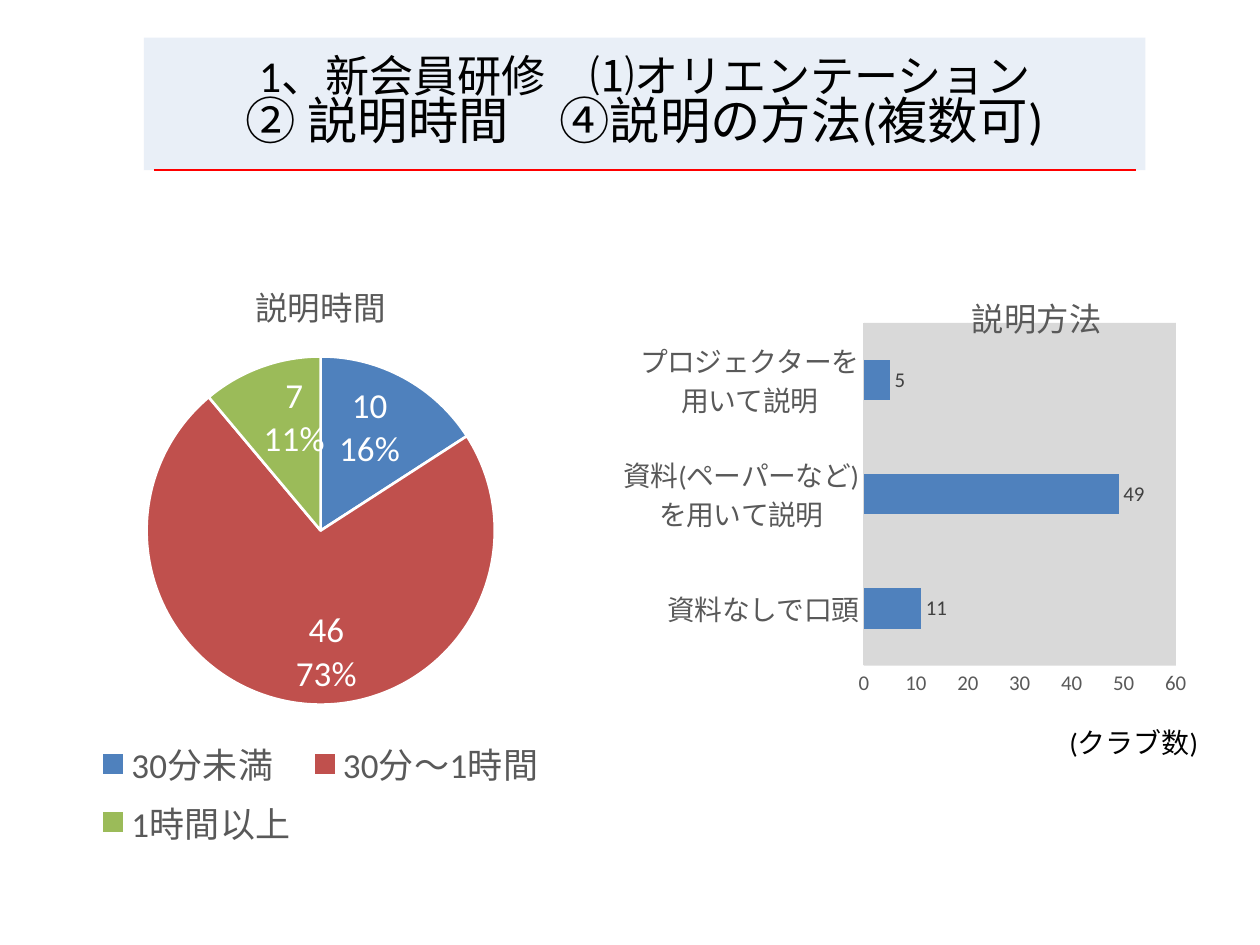
from lxml import etree
from pptx import Presentation
from pptx.chart import data
from pptx.dml import color
from pptx.enum import chart as ch, shapes, text
from pptx.oxml import ns
from pptx.util import Cm, Pt

THEME = {
    "font": "Calibri", "ink": "000000", "muted": "595959", "label": "404040",
    "white": "FFFFFF", "band": "E9EFF7", "rule": "FF0000", "grey": "D9D9D9",
    "slices": ["4F81BD", "C0504D", "9BBB59"],
    "sizes": {"topic": 25.2, "heading": 28.8, "chart": 10, "title": 18.6,
              "legend": 20, "slice": 20, "category": 16, "tick": 12, "unit": 16},
}
SIZES = THEME["sizes"]

HEADING = [("1、新会員研修　⑴オリエンテーション", "topic"),
           ("② 説明時間　④説明の方法(複数可)", "heading")]
UNIT = "(クラブ数)"
DURATION = ("説明時間", [("30分未満", 10), ("30分～1時間", 46), ("1時間以上", 7)])
METHOD = ("説明方法", [("資料なしで口頭", 11), ("資料(ペーパーなど)を用いて説明", 49),
                   ("プロジェクターを用いて説明", 5)])

PLACES = {
    "heading": (2.9, 0.76, 20.19, 2.67),
    "rule": (3.1, 3.43, 22.91, 3.43),
    "method": (12.57, 5.11, 12.93, 10.01),
    "duration": (0, 5.11, 12.93, 12.12),
    "unit": (21.31, 14.5, 3.2, 0.94),
}


def place(key):
    return [Cm(value) for value in PLACES[key]]


def assign(target, values):
    for key, value in values.items():
        setattr(target, key, value)


def style(font, size, ink):
    assign(font, {"size": Pt(SIZES[size]), "name": THEME["font"], "bold": False})
    font.color.rgb = color.RGBColor.from_string(THEME[ink])


def paint(fill, rgb):
    fill.solid()
    fill.fore_color.rgb = color.RGBColor.from_string(rgb)


def stroke(line, rgb, width):
    line.color.rgb = color.RGBColor.from_string(rgb)
    line.width = Pt(width)


def set_layout(parent, before, values, inner=False):
    for old in parent.findall(ns.qn("c:layout")):
        parent.remove(old)
    layout = etree.Element(ns.qn("c:layout"))
    manual = etree.SubElement(layout, ns.qn("c:manualLayout"))
    modes = {"layoutTarget": "inner"} if inner else {}
    modes.update({"xMode": "edge", "yMode": "edge"})
    for tag, value in {**modes, **values}.items():
        etree.SubElement(manual, ns.qn("c:" + tag)).set("val", str(value))
    parent.insert(before, layout)


def add_survey(slide, kind, key, survey):
    name, answers = survey
    source = data.CategoryChartData()
    source.categories = [answer for answer, _ in answers]
    source.add_series(name, [count for _, count in answers])
    survey_chart = slide.shapes.add_chart(kind, *place(key), source).chart
    style(survey_chart.font, "chart", "ink")
    survey_chart.has_title = True
    title = survey_chart.chart_title
    title.include_in_layout = False
    title.text_frame.text = name
    style(title.text_frame.paragraphs[0].runs[0].font, "title", "muted")
    return survey_chart


def add_labels(plot, size, ink, values):
    plot.has_data_labels = True
    assign(plot.data_labels, values)
    style(plot.data_labels.font, size, ink)


def add_heading(slide):
    band = slide.shapes.add_shape(shapes.MSO_SHAPE.RECTANGLE, *place("heading"))
    band.shadow.inherit = False
    paint(band.fill, THEME["band"])
    band.line.fill.background()
    assign(band.text_frame, {"word_wrap": True, "vertical_anchor": text.MSO_ANCHOR.MIDDLE})
    lines = band.text_frame.paragraphs[0]
    assign(lines, {"alignment": text.PP_ALIGN.CENTER, "line_spacing": 0.8})
    for index, (words, size) in enumerate(HEADING):
        if index:
            lines.add_line_break()
        run = lines.add_run()
        run.text = words
        style(run.font, size, "ink")
    rule = slide.shapes.add_connector(shapes.MSO_CONNECTOR.STRAIGHT, *place("rule"))
    stroke(rule.line, THEME["rule"], 1.5)
    etree.SubElement(rule._element.spPr, ns.qn("a:effectLst"))


def add_method(slide):
    bars = add_survey(slide, ch.XL_CHART_TYPE.BAR_CLUSTERED, "method", METHOD)
    bars.has_legend = False
    set_layout(bars.chart_title._element, 1, {"x": 0.53, "y": 0.06})
    plot = bars.plots[0]
    assign(plot, {"gap_width": 182, "vary_by_categories": False})
    paint(plot.series[0].format.fill, THEME["slices"][0])
    add_labels(plot, "tick", "label", {
        "show_value": True, "position": ch.XL_LABEL_POSITION.OUTSIDE_END})
    for axis, size in ((bars.category_axis, "category"), (bars.value_axis, "tick")):
        assign(axis, {"major_tick_mark": ch.XL_TICK_MARK.NONE,
                      "minor_tick_mark": ch.XL_TICK_MARK.NONE})
        style(axis.tick_labels.font, size, "muted")
    stroke(bars.category_axis.format.line, THEME["grey"], 0.75)
    assign(bars.value_axis, {"minimum_scale": 0, "maximum_scale": 60, "major_unit": 10})
    bars.value_axis.format.line.fill.background()
    stroke(bars.value_axis.major_gridlines.format.line, THEME["grey"], 0.75)
    area = bars._chartSpace.chart.plotArea
    set_layout(area, 0, {"x": 0.37, "y": 0.14, "w": 0.49, "h": 0.69}, inner=True)
    area_fill = etree.SubElement(etree.SubElement(area, ns.qn("c:spPr")), ns.qn("a:solidFill"))
    etree.SubElement(area_fill, ns.qn("a:srgbClr")).set("val", THEME["grey"])


def add_duration(slide):
    pie = add_survey(slide, ch.XL_CHART_TYPE.PIE, "duration", DURATION)
    pie.has_legend = True
    assign(pie.legend, {"position": ch.XL_LEGEND_POSITION.BOTTOM, "include_in_layout": False})
    style(pie.legend.font, "legend", "muted")
    plot = pie.plots[0]
    plot.vary_by_categories = True
    for index, rgb in enumerate(THEME["slices"]):
        piece = plot.series[0].points[index].format
        paint(piece.fill, rgb)
        stroke(piece.line, THEME["white"], 1.5)
    add_labels(plot, "slice", "white", {
        "show_value": True, "show_percentage": True,
        "position": ch.XL_LABEL_POSITION.INSIDE_END})
    separator = etree.Element(ns.qn("c:separator"))
    separator.text = "\n"
    plot.data_labels._element.find(ns.qn("c:showBubbleSize")).addnext(separator)


def add_unit(slide):
    unit = slide.shapes.add_textbox(*place("unit")).text_frame
    assign(unit, {"word_wrap": True, "auto_size": text.MSO_AUTO_SIZE.SHAPE_TO_FIT_TEXT,
                  "text": UNIT})
    style(unit.paragraphs[0].runs[0].font, "unit", "ink")


def main():
    deck = Presentation()
    assign(deck, {"slide_width": Cm(25.4), "slide_height": Cm(19.05)})
    slide = deck.slides.add_slide(deck.slide_layouts[6])
    for add_part in (add_heading, add_method, add_duration, add_unit):
        add_part(slide)
    deck.save("out.pptx")


if __name__ == "__main__":
    main()
